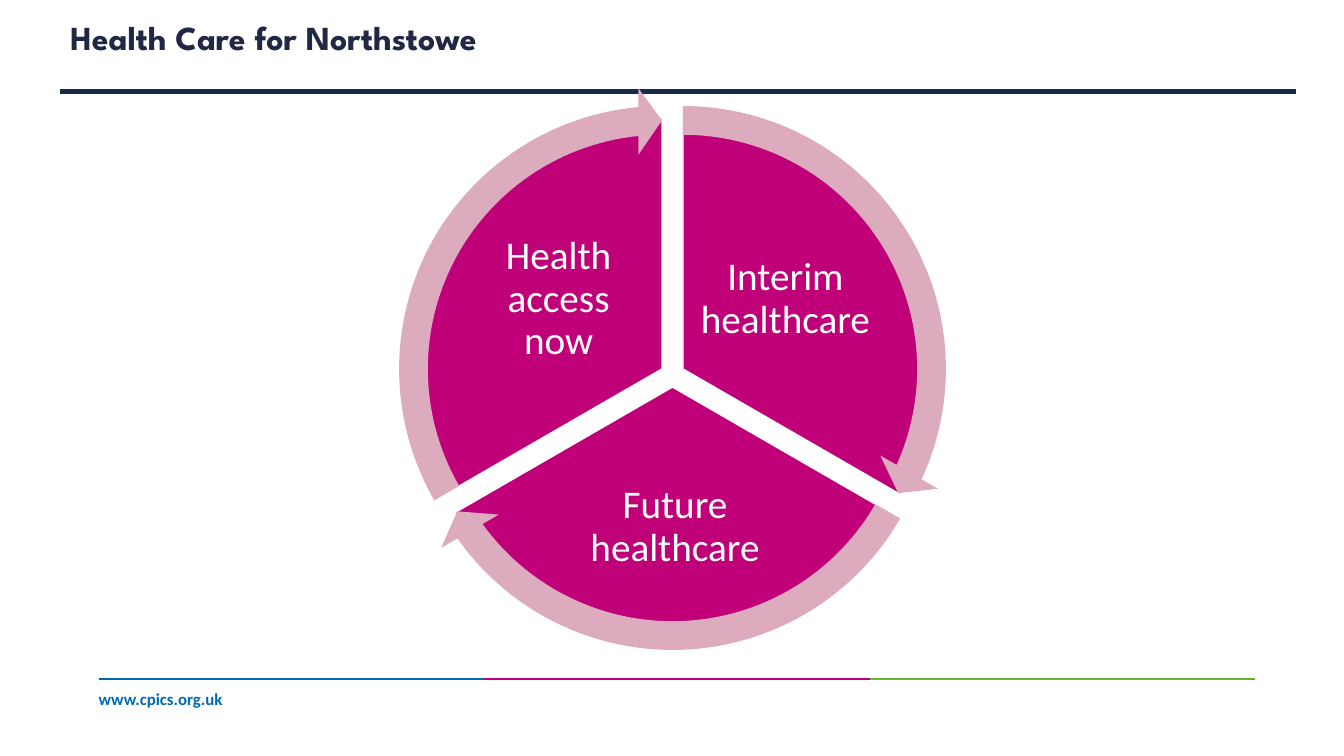
import math

import pptx
import pptx.util
import pptx.dml.color
import pptx.enum.shapes
import pptx.enum.text
import pptx.oxml.ns
from lxml import etree

Inches = pptx.util.Inches
Pt = pptx.util.Pt
RGBColor = pptx.dml.color.RGBColor
MSO_SHAPE = pptx.enum.shapes.MSO_SHAPE

NAVY = RGBColor(0x19, 0x2A, 0x46)
TITLE = RGBColor(0x21, 0x28, 0x44)
BLUE = RGBColor(0x00, 0x69, 0xB3)
MAGENTA = RGBColor(0xBF, 0x00, 0x78)
GREEN = RGBColor(0x65, 0xB3, 0x2E)
PINK = RGBColor(0xDC, 0xAB, 0xBE)
WHITE = RGBColor(0xFF, 0xFF, 0xFF)

STAGES = [
    ("Interim healthcare", (6.9, 2.23, 1.78, 1.48)),
    ("Future healthcare", (5.36, 4.58, 2.67, 1.3)),
    ("Health access now", (4.65, 2.23, 1.78, 1.48)),
]


def add_rule(slide, left, top, width, color, weight):
    """Draw a horizontal line."""
    line = slide.shapes.add_connector(
        pptx.enum.shapes.MSO_CONNECTOR.STRAIGHT,
        Inches(left), Inches(top), Inches(left + width), Inches(top))
    line.line.color.rgb = color
    line.line.width = Pt(weight)
    etree.SubElement(line._element.spPr, pptx.oxml.ns.qn("a:effectLst"))


def add_text(slide, box, text, font, size, color, bold=False):
    """Add a one-paragraph text box and return its text frame."""
    tf = slide.shapes.add_textbox(*map(Inches, box)).text_frame
    tf.word_wrap = True
    p = tf.paragraphs[0]
    p.text = text
    p.font.name = font
    p.font.size = Pt(size)
    p.font.bold = bold
    p.font.color.rgb = color
    return tf


def add_round_shape(slide, kind, cx, cy, diameter, fill, adjustments):
    """Add a filled shape centred on a point."""
    sp = slide.shapes.add_shape(
        kind, Inches(cx - diameter / 2), Inches(cy - diameter / 2),
        Inches(diameter), Inches(diameter))
    sp.shadow.inherit = False
    sp.fill.solid()
    sp.fill.fore_color.rgb = fill
    sp.line.fill.background()
    for i, value in enumerate(adjustments):
        sp.adjustments[i] = value
    return sp


def add_header(slide, left, top, width):
    """Place the title and the rule below it."""
    add_rule(slide, left, top + 0.79, width, NAVY, 3.25)
    add_text(slide, (left, top, width, 0.5), "Health Care for Northstowe",
             "League Spartan", 24, TITLE, True)


def add_footer(slide, left, top, width):
    """Place the three-part rule and the web address."""
    part = width / 3
    for i, color in enumerate((BLUE, MAGENTA, GREEN)):
        add_rule(slide, left + i * part, top, part, color, 1.25)
    add_text(slide, (left - 0.1, top + 0.04, 3.2, 0.3), "www.cpics.org.uk",
             "Calibri", 12, BLUE, True)


def add_cycle(slide, cx, cy, diameter):
    """Place the pie segments, their labels and the arrows around them."""
    unit = 0.6
    head = 3.275
    gap = 0.12
    arrows = []
    for i, (label, box) in enumerate(STAGES):
        start = (270 + 120 * i) % 360
        end = (start + 120) % 360
        middle = math.radians(start + 60)
        x = cx + gap * math.cos(middle)
        y = cy + gap * math.sin(middle)
        pie = add_round_shape(slide, MSO_SHAPE.PIE, x, y, diameter, MAGENTA,
                              (start * unit, end * unit))
        pie.line.color.rgb = WHITE
        pie.line.width = Pt(1)
        tf = add_text(slide, box, label, "Calibri", 28, WHITE)
        tf.vertical_anchor = pptx.enum.text.MSO_ANCHOR.MIDDLE
        tf.margin_left = tf.margin_right = Inches(0.04)
        tf.margin_top = tf.margin_bottom = Inches(0.04)
        tf.paragraphs[0].alignment = pptx.enum.text.PP_ALIGN.CENTER
        tf.paragraphs[0].line_spacing = 0.9
        arrows.append((x, y, (0.051, head, end * unit - head, start * unit, 0.059)))
    for x, y, adjustments in arrows:
        add_round_shape(slide, MSO_SHAPE.CIRCULAR_ARROW, x, y, diameter + 0.61,
                        PINK, adjustments)


def main():
    """Build and save the slide."""
    prs = pptx.Presentation()
    prs.slide_width = Inches(13.33)
    prs.slide_height = Inches(7.5)
    slide = prs.slides.add_slide(prs.slide_layouts[6])
    add_footer(slide, 0.98, 6.74, 11.47)
    add_header(slide, 0.6, 0.12, 12.25)
    add_cycle(slide, 6.67, 3.72, 4.98)
    prs.save("out.pptx")


if __name__ == "__main__":
    main()
